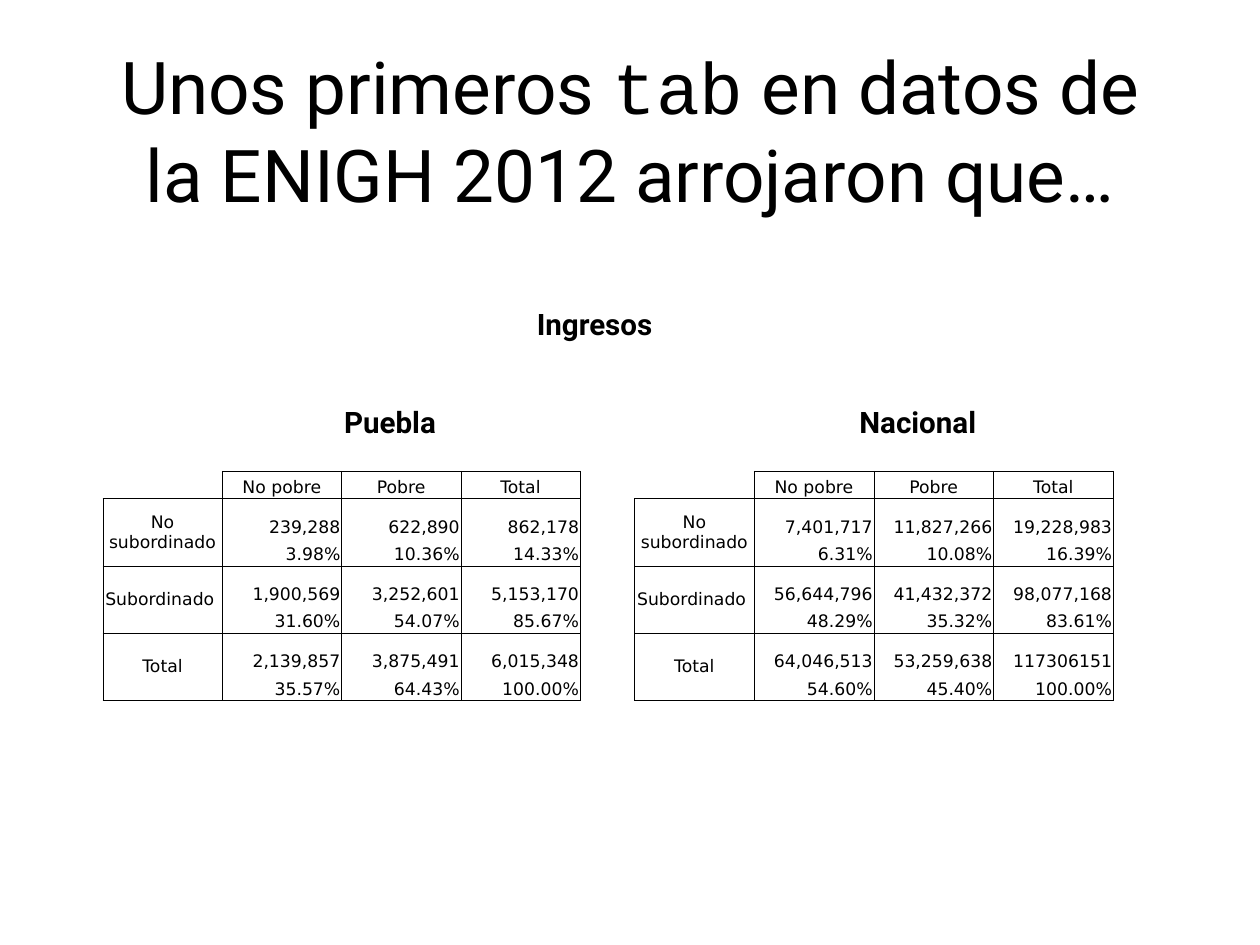
from lxml import etree
from pptx import Presentation
from pptx import util as u
from pptx.dml.color import RGBColor
from pptx.enum import text
from pptx.oxml import ns

BLACK = RGBColor(0, 0, 0)
HEADINGS = ["No pobre", "Pobre", "Total"]
LABELS = ["No subordinado", "Subordinado ", "Total"]

PUEBLA = [
    [("239,288", "3.98%"), ("622,890", "10.36%"), ("862,178", "14.33%")],
    [("1,900,569", "31.60%"), ("3,252,601", "54.07%"), ("5,153,170", "85.67%")],
    [("2,139,857", "35.57%"), ("3,875,491", "64.43%"), ("6,015,348", "100.00%")],
]
NACIONAL = [
    [("7,401,717", "6.31%"), ("11,827,266", "10.08%"), ("19,228,983", "16.39%")],
    [("56,644,796", "48.29%"), ("41,432,372", "35.32%"), ("98,077,168", "83.61%")],
    [("64,046,513", "54.60%"), ("53,259,638", "45.40%"), ("117306151", "100.00%")],
]

HEADER_HEIGHT = PERCENT_HEIGHT = u.Cm(0.79)
COUNT_HEIGHT = u.Cm(1.14)
TABLE_TOP = u.Cm(13.51)
CELL_MARGIN = u.Cm(0.03)
BOX_MARGIN = u.Cm(0.15)


def style_span(span, size, font, bold=False):
    span.font.size = u.Pt(size)
    span.font.name = font
    span.font.bold = bold
    span.font.color.rgb = BLACK


def set_margins(holder, margin):
    holder.margin_left = holder.margin_right = margin
    holder.margin_top = holder.margin_bottom = margin


def add_text(slide, left, top, width, height, pieces, size, bold=False, wrap=False):
    """Add a centred text box from (wording, font) pieces."""
    box = slide.shapes.add_textbox(u.Cm(left), u.Cm(top), u.Cm(width), u.Cm(height))
    frame = box.text_frame
    frame.word_wrap = wrap
    frame.vertical_anchor = text.MSO_ANCHOR.MIDDLE
    set_margins(frame, BOX_MARGIN)
    para = frame.paragraphs[0]
    para.alignment = text.PP_ALIGN.CENTER
    for wording, font in pieces:
        span = para.add_run()
        span.text = wording
        style_span(span, size, font, bold)


def add_subheading(slide, left, top, width, wording):
    add_text(slide, left, top, width, 1.27, [(wording, "Roboto")], 24, bold=True)


def set_borders(cell, sides):
    """Draw the sides named by the letters L, R, T and B; clear the others."""
    properties = cell._tc.get_or_add_tcPr()
    for index, side in enumerate("LRTB"):
        line = etree.Element(ns.qn(f"a:ln{side}"), w=str(u.Pt(0.5)))
        if side in sides:
            fill = etree.SubElement(line, ns.qn("a:solidFill"))
            etree.SubElement(fill, ns.qn("a:srgbClr"), val=str(BLACK))
        else:
            etree.SubElement(line, ns.qn("a:noFill"))
        properties.insert(index, line)


def format_cell(cell, sides, wording="", align=text.PP_ALIGN.CENTER,
                anchor=text.MSO_ANCHOR.BOTTOM):
    cell.fill.background()
    set_margins(cell, CELL_MARGIN)
    cell.vertical_anchor = anchor
    set_borders(cell, sides)
    para = cell.text_frame.paragraphs[0]
    if wording:
        para.text = wording
        para.alignment = align
        style_span(para.runs[0], 14, "DejaVu Sans")
    else:
        # An empty cell at the default size would stretch its row
        etree.SubElement(para._p, ns.qn("a:endParaRPr"), sz="1400")


def add_crosstab(slide, left, column_width, groups):
    """Add a table with a count row and a percentage row for each label."""
    heights = [HEADER_HEIGHT] + [COUNT_HEIGHT, PERCENT_HEIGHT] * len(LABELS)
    columns = len(HEADINGS) + 1
    frame = slide.shapes.add_table(len(heights), columns, u.Cm(left), TABLE_TOP,
                                   u.Cm(column_width * columns), sum(heights))
    table = frame.table
    table.first_row = table.horz_banding = False
    for column in table.columns:
        column.width = u.Cm(column_width)
    for row, height in zip(table.rows, heights):
        row.height = height

    format_cell(table.cell(0, 0), "RB")
    for column, heading in enumerate(HEADINGS, 1):
        format_cell(table.cell(0, column), "LRTB", heading)

    for index, (label, group) in enumerate(zip(LABELS, groups)):
        row = 1 + 2 * index
        label_cell, lower_cell = table.cell(row, 0), table.cell(row + 1, 0)
        label_cell.merge(lower_cell)
        format_cell(label_cell, "LRTB", label, anchor=text.MSO_ANCHOR.MIDDLE)
        format_cell(lower_cell, "LRB")
        for column, (count, percent) in enumerate(group, 1):
            format_cell(table.cell(row, column), "LRT", count, text.PP_ALIGN.RIGHT)
            format_cell(table.cell(row + 1, column), "LRB", percent, text.PP_ALIGN.RIGHT)


def main():
    deck = Presentation()
    deck.slide_width, deck.slide_height = u.Cm(36.12), u.Cm(27.1)
    slide = deck.slides.add_slide(deck.slide_layouts[6])

    title = [("Unos primeros ", "Roboto"), ("tab", "Courier New"),
             (" en datos de la ENIGH 2012 arrojaron que…", "Roboto")]
    add_text(slide, 2.64, 0.71, 30.84, 6, title, 59.2, wrap=True)
    add_crosstab(slide, 2.95, 3.42, PUEBLA)
    add_crosstab(slide, 18.19, 3.43, NACIONAL)
    add_subheading(slide, 15.14, 8.64, 3.81, "Ingresos")
    add_subheading(slide, 9.63, 11.46, 3.1, "Puebla")
    add_subheading(slide, 24.38, 11.46, 3.86, "Nacional")
    deck.save("out.pptx")


if __name__ == "__main__":
    main()
